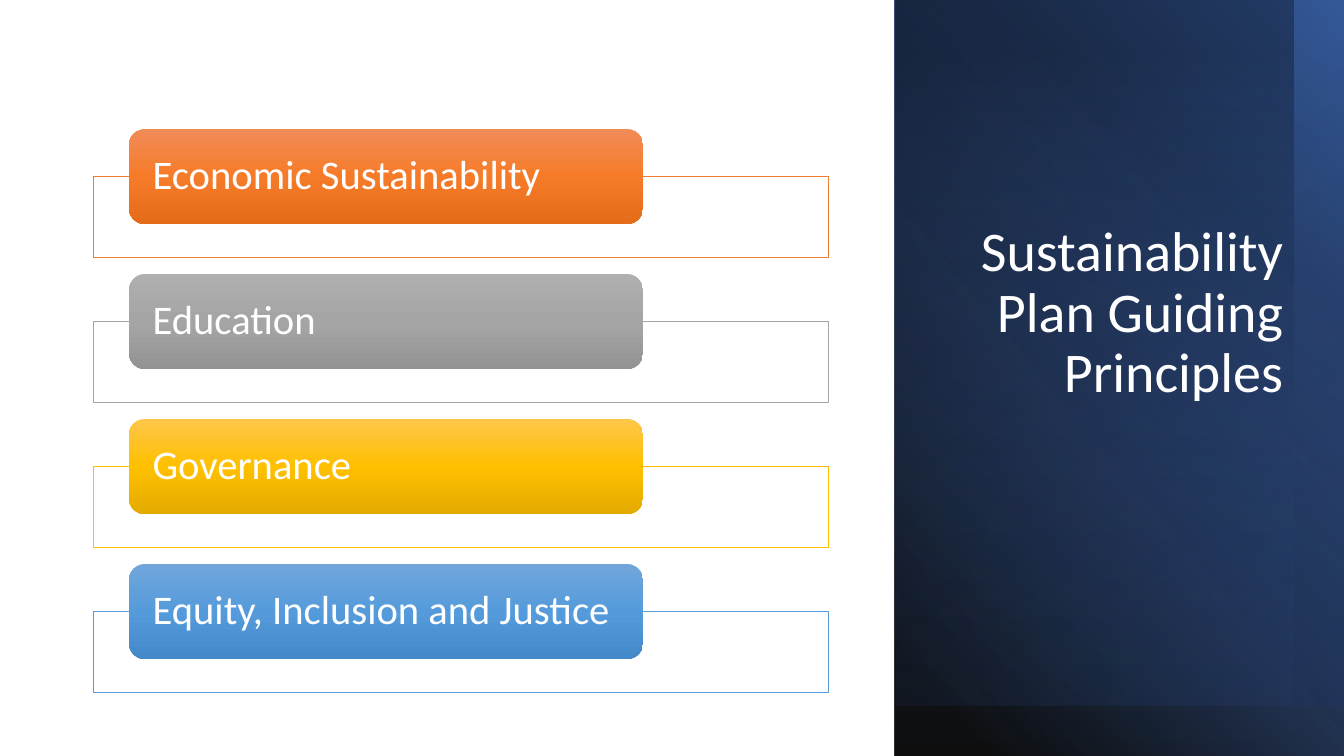
from lxml import etree
from pptx import Presentation
from pptx.dml.color import RGBColor
from pptx.enum.shapes import MSO_SHAPE
from pptx.enum.text import MSO_ANCHOR, PP_ALIGN
from pptx.oxml.ns import qn
from pptx.util import Emu, Pt

RECTANGLE = MSO_SHAPE.RECTANGLE
ROUNDED = MSO_SHAPE.ROUNDED_RECTANGLE
MIDDLE, BOTTOM = MSO_ANCHOR.MIDDLE, MSO_ANCHOR.BOTTOM
LEFT, RIGHT = PP_ALIGN.LEFT, PP_ALIGN.RIGHT

SLIDE_WIDTH, SLIDE_HEIGHT = 1344, 756
EMU_PER_PX = 12192000 / SLIDE_WIDTH
FONT = "Calibri"
WHITE = "FFFFFF"

PANEL_LEFT = 895
PANELS = [
    (452, 756, 40, [(8, "000000", 94), (100, "4472C4", 100)]),
    (452, 706, 300, [(31, "203864", 0), (100, "203864", 26)]),
    (449, 706, 50, [(0, "4472C4", 0), (72, "000000", 21)]),
    (398, 756, 90, [(0, "4472C4", 0), (93, "000000", 29)]),
]

FIRST_TOP, ROW_PITCH = 129, 145
PRINCIPLES = [
    ("Economic Sustainability", "ED7D31", ("F18C57", "F67B28", "E56C19")),
    ("Education", "A5A5A5", ("AFAFAF", "A5A5A5", "939393")),
    ("Governance", "FFC000", ("FFC64B", "FFC000", "E3AB00")),
    ("Equity, Inclusion and Justice", "5B9BD5", ("71A6DB", "559BDB", "448ACA")),
]


def px(length):
    return Emu(round(length * EMU_PER_PX))


def color(hex_value):
    return RGBColor.from_string(hex_value)


def add_box(slide, kind, left, top, width, height):
    shape = slide.shapes.add_shape(kind, px(left), px(top), px(width), px(height))
    shape.shadow.inherit = False
    shape.line.fill.background()
    return shape


def set_gradient(shape, stops, angle):
    shape.fill.gradient()
    shape.fill.gradient_angle = 360 - angle
    stop_list = shape.element.spPr.find(qn("a:gradFill")).find(qn("a:gsLst"))
    for stop in list(stop_list):
        stop_list.remove(stop)
    for position, hex_value, opacity in stops:
        stop = etree.SubElement(stop_list, qn("a:gs"), pos=str(position * 1000))
        tint = etree.SubElement(stop, qn("a:srgbClr"), val=hex_value)
        if opacity < 100:
            etree.SubElement(tint, qn("a:alpha"), val=str(opacity * 1000))


def set_text(shape, text, size, alignment, anchor):
    frame = shape.text_frame
    frame.word_wrap = True
    frame.vertical_anchor = anchor
    paragraph = frame.paragraphs[0]
    paragraph.text = text
    paragraph.alignment = alignment
    paragraph.line_spacing = 0.9
    paragraph.font.name = FONT
    paragraph.font.size = Pt(size)
    paragraph.font.color.rgb = color(WHITE)


def add_panel(slide, width, height, angle, stops):
    panel = add_box(slide, RECTANGLE, PANEL_LEFT, 0, width, height)
    panel.rotation = 180
    panel.element.spPr.find(qn("a:xfrm")).set("flipH", "1")
    set_gradient(panel, stops, angle)


def add_principle(slide, top, text, outline, shades):
    frame = add_box(slide, RECTANGLE, 93, top + 47, 735, 81)
    frame.fill.solid()
    frame.fill.fore_color.rgb = color(WHITE)
    frame.line.color.rgb = color(outline)
    frame.line.width = Pt(0.5)

    pill = add_box(slide, ROUNDED, 129, top, 514, 95)
    set_gradient(pill, [(i * 50, shade, 100) for i, shade in enumerate(shades)], 90)
    set_text(pill, text, 29, LEFT, MIDDLE)
    text_frame = pill.text_frame
    text_frame.margin_left = text_frame.margin_right = px(19)
    text_frame.margin_top = text_frame.margin_bottom = 0


def add_title(slide, text):
    title = slide.shapes.add_textbox(px(949), px(146), px(344), px(264))
    set_text(title, text, 40, RIGHT, BOTTOM)


def main():
    presentation = Presentation()
    presentation.slide_width = px(SLIDE_WIDTH)
    presentation.slide_height = px(SLIDE_HEIGHT)
    slide = presentation.slides.add_slide(presentation.slide_layouts[6])
    for panel in PANELS:
        add_panel(slide, *panel)
    for row, principle in enumerate(PRINCIPLES):
        add_principle(slide, FIRST_TOP + row * ROW_PITCH, *principle)
    add_title(slide, "Sustainability Plan Guiding Principles")
    presentation.save("out.pptx")


if __name__ == "__main__":
    main()
